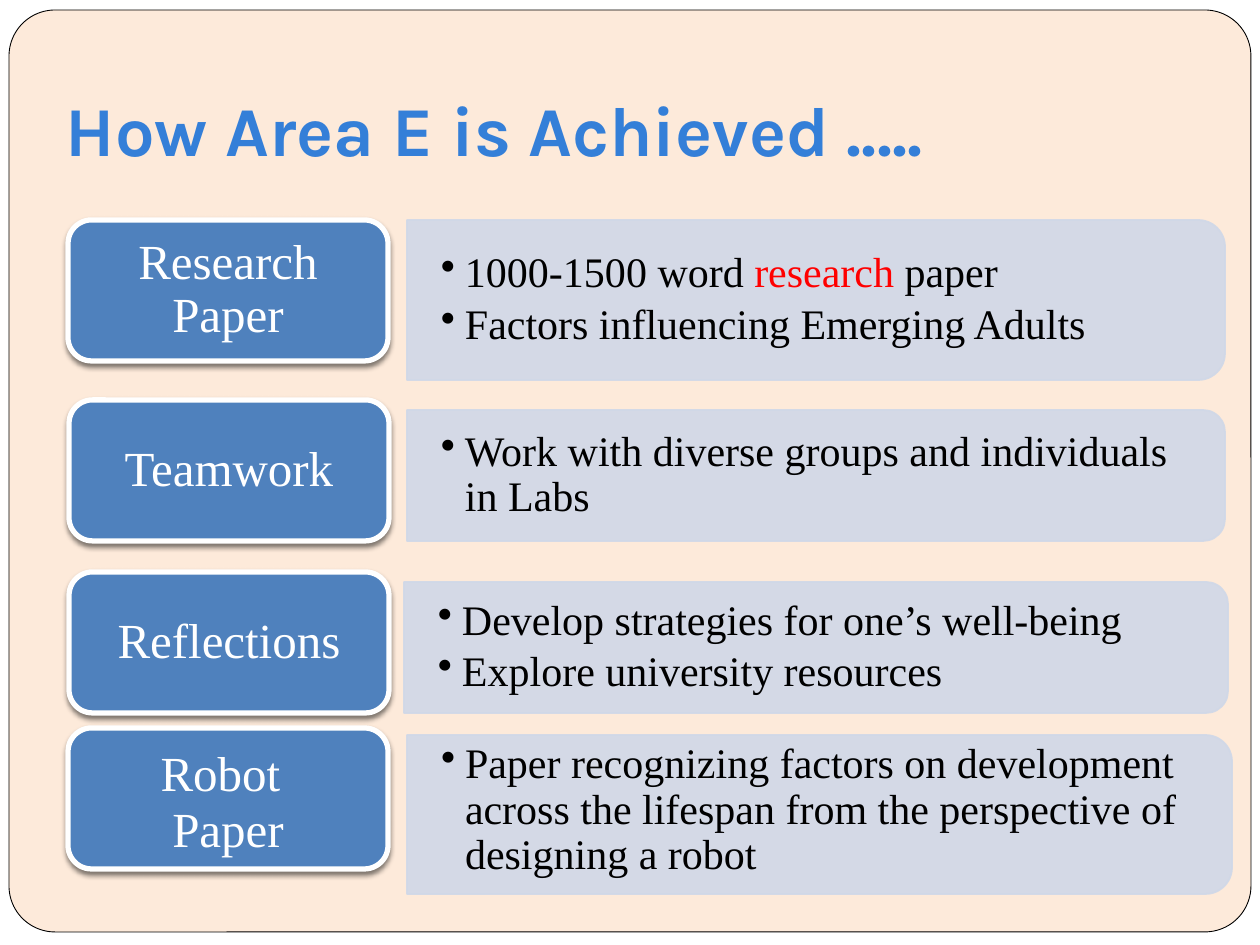
from lxml.etree import SubElement
from pptx import Presentation
from pptx.dml.color import RGBColor as Rgb
from pptx.enum.shapes import MSO_SHAPE as Shape
from pptx.enum.text import MSO_ANCHOR as Anchor, MSO_AUTO_SIZE as AutoSize, PP_ALIGN as Align
from pptx.oxml.ns import qn
from pptx.util import Pt

EMU_PER_PX = 914400 / 126
SERIF = "Times New Roman"
COLORS = {
    "page": "FDEADA",
    "title": "347FD8",
    "card": "4F81BD",
    "panel": "D0D8E8",
    "white": "FFFFFF",
    "black": "000000",
    "accent": "FF0000",
}
ROWS = [
    {"card": (68, 220), "panel": (407, 220, 818, 160), "lift": 0,
     "label": [[("Research Paper", 28)]],
     "bullets": [[("1000-1500 word ", "black"), ("research", "accent"), (" paper", "black")],
                 [("Factors influencing Emerging Adults", "black")]]},
    {"card": (69, 400), "panel": (407, 410, 818, 131), "lift": 0,
     "label": [[("Teamwork", 28)]],
     "bullets": [[("Work with diverse groups and individuals in Labs", "black")]]},
    {"card": (69, 572), "panel": (404, 582, 824, 131), "lift": 0,
     "label": [[("Reflections", 28)]],
     "bullets": [[("Develop strategies for one’s well-being", "black")],
                 [("Explore university resources", "black")]]},
    {"card": (68, 728), "panel": (407, 735, 825, 159), "lift": 4,
     "label": [[("Robot", 28), (" ", 35)], [("Paper", 28)]],
     "bullets": [[("Paper recognizing factors on development across the lifespan "
                   "from the perspective of designing a robot", "black")]]},
]


def px(length):
    return round(length * EMU_PER_PX)


def box(*lengths):
    return [px(length) for length in lengths]


def apply(target, values):
    for name, value in values.items():
        setattr(target, name, value)


def style_font(font, size, color, name=SERIF, bold=False):
    apply(font, {"size": Pt(size), "name": name, "bold": bold})
    font.color.rgb = Rgb.from_string(COLORS[color])


def set_frame(frame, side, edge, anchor=Anchor.MIDDLE):
    apply(frame, {"word_wrap": True, "auto_size": AutoSize.NONE, "vertical_anchor": anchor,
                  "margin_left": px(side), "margin_right": px(side),
                  "margin_top": px(edge), "margin_bottom": px(edge)})


def add_filled(slide, preset, bounds, fill, line, width):
    filled = slide.shapes.add_shape(preset, *box(*bounds))
    filled.shadow.inherit = False
    filled.fill.solid()
    filled.fill.fore_color.rgb = Rgb.from_string(COLORS[fill])
    filled.line.color.rgb = Rgb.from_string(COLORS[line])
    filled.line.width = Pt(width)
    return filled


def add_shadow(card):
    effects = card._element.spPr.find(qn("a:effectLst"))
    shadow = SubElement(effects, qn("a:outerShdw"), blurRad=str(Pt(3)), dist=str(Pt(2)),
                        dir="5400000", rotWithShape="0")
    tint = SubElement(shadow, qn("a:srgbClr"), val=COLORS["black"])
    SubElement(tint, qn("a:alpha"), val="50000")


def add_bullet(paragraph):
    props = paragraph._p.get_or_add_pPr()
    props.set("marL", str(px(24)))
    props.set("indent", str(px(-24)))
    SubElement(props, qn("a:buChar"), char="•")


def add_title(slide, left, top, width, height):
    title = slide.shapes.title
    bounds = box(left, top, width, height)
    apply(title, dict(zip(("left", "top", "width", "height"), bounds)))
    set_frame(title.text_frame, 13, 6, Anchor.BOTTOM)
    title.text_frame.margin_bottom = px(13)
    heading = title.text_frame.paragraphs[0]
    heading.alignment = Align.LEFT
    run = heading.add_run()
    run.text = "How Area E is Achieved ....."
    style_font(run.font, 40, "title", "Karla", True)


def add_panel(slide, left, top, width, height):
    turned = (left + (width - height) / 2, top + (height - width) / 2, height, width)
    panel = add_filled(slide, Shape.ROUND_2_SAME_RECTANGLE, turned, "panel", "panel", 1)
    panel.rotation = 90
    for tint in panel._element.spPr.iter(qn("a:srgbClr")):
        SubElement(tint, qn("a:alpha"), val="90000")


def add_bullets(slide, bullets, left, top, width, height):
    frame = slide.shapes.add_textbox(*box(left, top, width, height)).text_frame
    set_frame(frame, 34, 17)
    for number, parts in enumerate(bullets):
        item = frame.add_paragraph() if number else frame.paragraphs[0]
        apply(item, {"level": 1, "line_spacing": 0.9, "space_after": Pt(3.6)})
        add_bullet(item)
        for text, color in parts:
            run = item.add_run()
            run.text = text
            style_font(run.font, 24, color)


def add_card(slide, lines, left, top, width=320, height=141):
    card = add_filled(slide, Shape.ROUNDED_RECTANGLE, (left, top, width, height),
                      "card", "white", 3)
    add_shadow(card)
    set_frame(card.text_frame, 26, 16)
    label = card.text_frame.paragraphs[0]
    apply(label, {"alignment": Align.CENTER, "line_spacing": 0.9, "space_after": Pt(9.8)})
    for number, parts in enumerate(lines):
        if number:
            label.add_line_break()
        for text, size in parts:
            run = label.add_run()
            run.text = text
            style_font(run.font, size, "white")


def add_row(slide, row):
    left, top, width, height = row["panel"]
    add_panel(slide, left, top, width, height)
    add_bullets(slide, row["bullets"], left, top - row["lift"], width, height)
    add_card(slide, row["label"], *row["card"])


def main():
    deck = Presentation()
    apply(deck, {"slide_width": px(1260), "slide_height": px(945)})
    slide = deck.slides.add_slide(deck.slide_layouts[5])
    page = add_filled(slide, Shape.ROUNDED_RECTANGLE, (9, 10, 1242, 922), "page", "black", 0.5)
    page.adjustments[0] = 0.05
    slide.shapes._spTree.insert(2, page._element)
    add_title(slide, 53, 26, 1071, 158)
    for row in ROWS:
        add_row(slide, row)
    deck.save("out.pptx")


if __name__ == "__main__":
    main()
